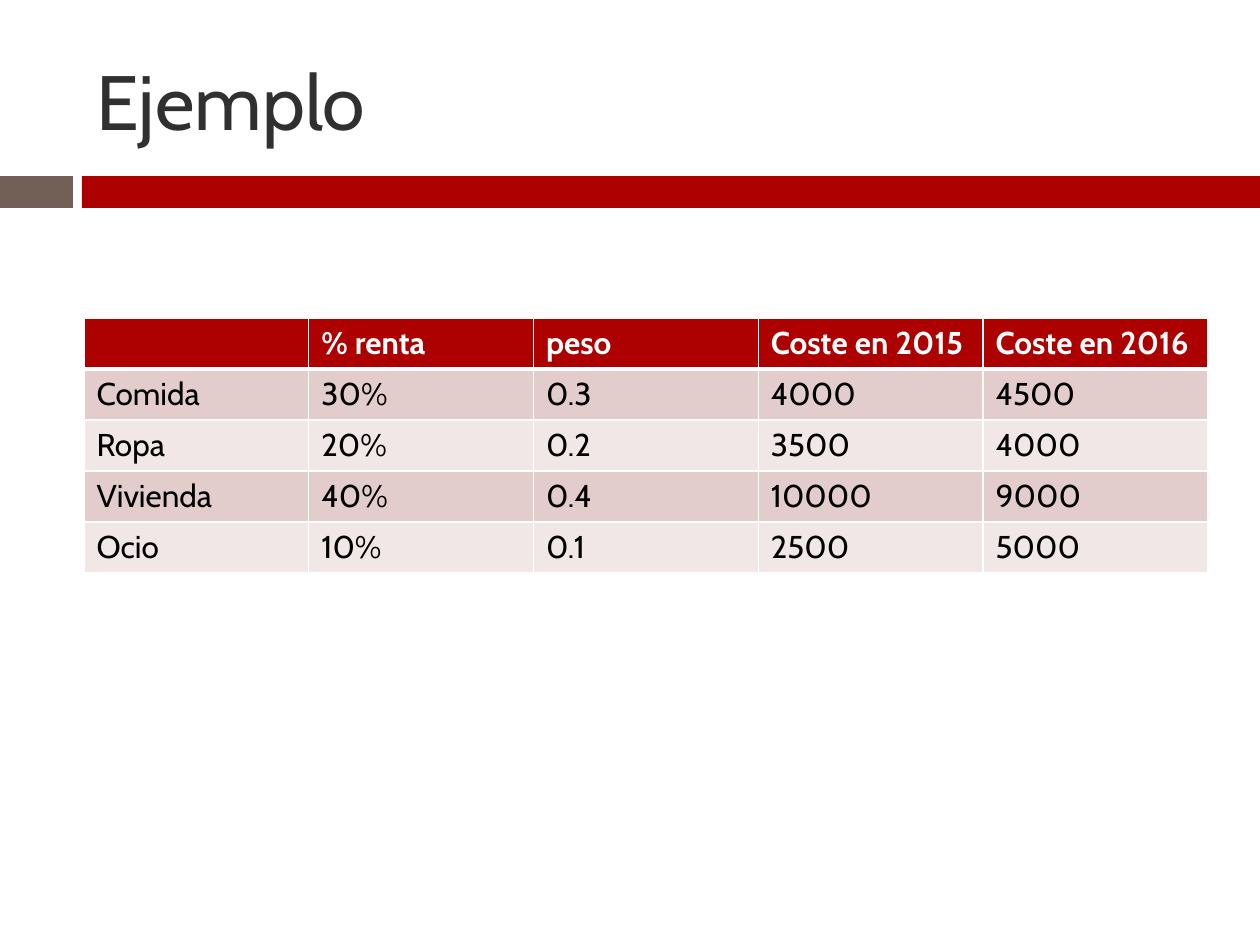
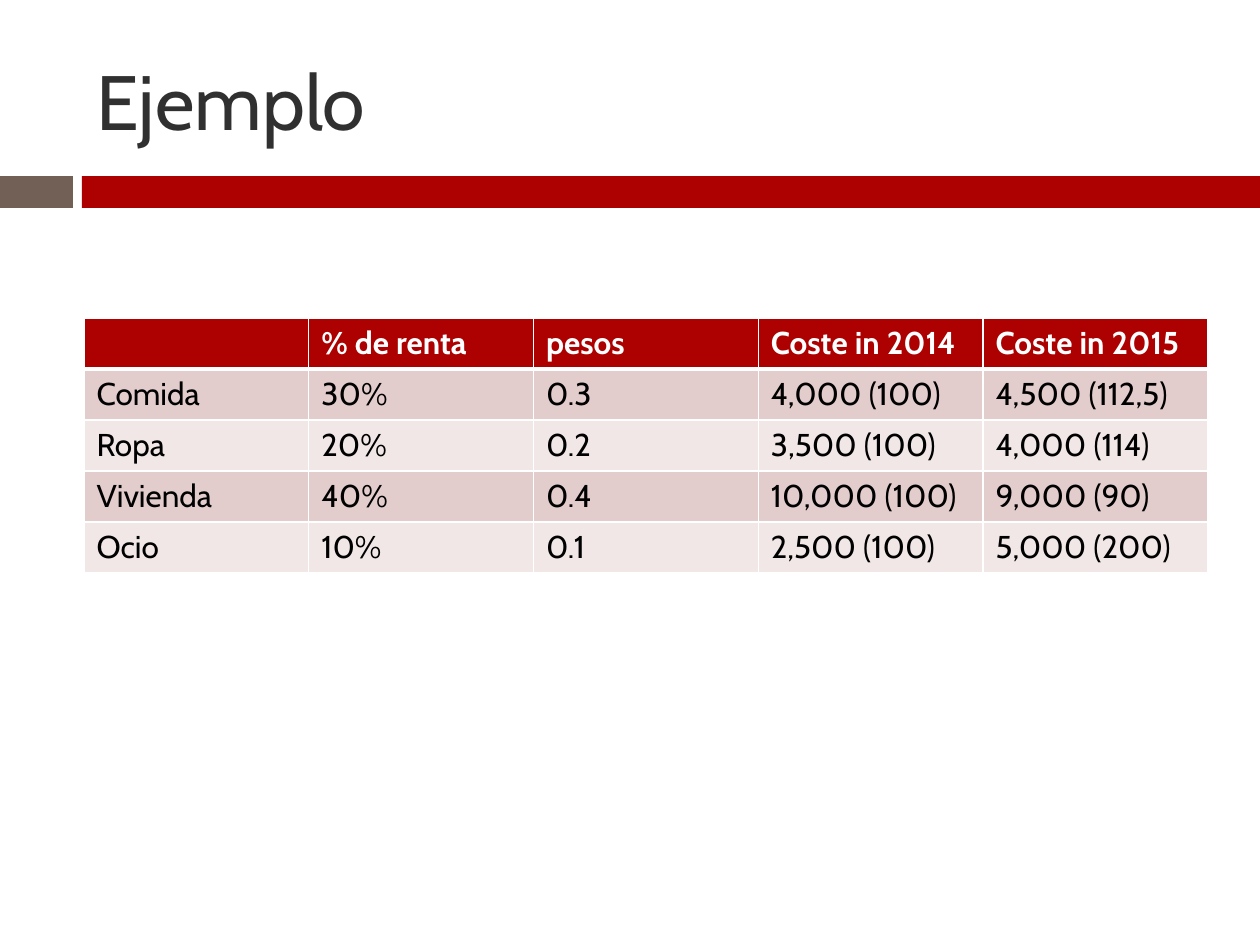
from dataclasses import dataclass

from lxml.etree import SubElement
from pptx import Presentation
from pptx.dml.color import RGBColor as RGB
from pptx.enum.shapes import MSO_SHAPE as Shape
from pptx.enum.text import MSO_ANCHOR as Anchor
from pptx.oxml.ns import qn
from pptx.util import Pt

# Content: title, header row and body rows of each slide
SLIDES = [
    ("Ejemplo", [
        ("", "% renta", "peso", "Coste en 2015", "Coste en 2016"),
        ("Comida", "30%", "0.3", "4000", "4500"),
        ("Ropa", "20%", "0.2", "3500", "4000"),
        ("Vivienda", "40%", "0.4", "10000", "9000"),
        ("Ocio", "10%", "0.1", "2500", "5000"),
    ]),
    ("Ejemplo", [
        ("", "% de renta", "pesos", "Coste in 2014", "Coste in 2015"),
        ("Comida", "30%", "0.3", "4,000 (100)", "4,500 (112,5)"),
        ("Ropa", "20%", "0.2", "3,500 (100)", "4,000 (114)"),
        ("Vivienda", "40%", "0.4", "10,000 (100)", "9,000 (90)"),
        ("Ocio", "10%", "0.1", "2,500 (100)", "5,000 (200)"),
    ]),
]


@dataclass(frozen=True)
class Theme:
    font: str = "Cabin"
    title: str = "303030"
    red: str = "AD0101"
    brown: str = "726056"
    rows: tuple = ("E3CCCC", "F1E7E7")
    white: str = "FFFFFF"
    black: str = "000000"
    head_size: int = 44
    cell_size: int = 18
    thin: int = 1
    thick: int = 3


THEME = Theme()

# Layout in px, 126 to the inch
WIDE, HIGH = 1260, 945
LEFT, SPAN = 84, 1124
TITLE_TOP, TITLE_HIGH = 32, 136
BAND_TOP, BAND_HIGH = 176, 32
BANDS = [(0, 73, THEME.brown), (82, WIDE - 82, THEME.red)]
GRID_TOP, ROW_HIGH = 318, 51


def px(n):
    return round(n * 914400 / 126)


def box(*sides):
    return [px(n) for n in sides]


def paint(item, color):
    item.fill.solid()
    item.fill.fore_color.rgb = RGB.from_string(color)


def style(frame, size, color, bold=False):
    for run in frame.paragraphs[0].runs:
        font = run.font
        font.name, font.size, font.bold = THEME.font, Pt(size), bold
        font.color.rgb = RGB.from_string(color)


def add_bands(slide):
    for left, width, color in BANDS:
        band = slide.shapes.add_shape(
            Shape.RECTANGLE, *box(left, BAND_TOP, width, BAND_HIGH))
        band.shadow.inherit = False
        band.line.fill.background()
        paint(band, color)


def add_title(slide, text):
    frame = slide.shapes.add_textbox(
        *box(LEFT, TITLE_TOP, SPAN, TITLE_HIGH)).text_frame
    frame.word_wrap = True
    frame.vertical_anchor = Anchor.MIDDLE
    frame.text = text
    style(frame, THEME.head_size, THEME.title)


def add_edges(cell, top, bottom):
    edges = {"L": THEME.thin, "R": THEME.thin, "T": top, "B": bottom}
    props = cell._tc.get_or_add_tcPr()
    for side, width in edges.items():
        line = SubElement(props, qn(f"a:ln{side}"), w=str(Pt(width)))
        fill = SubElement(line, qn("a:solidFill"))
        SubElement(fill, qn("a:srgbClr"), val=THEME.white)


def add_grid(slide, rows):
    count = len(rows[0])
    grid = slide.shapes.add_table(
        len(rows), count,
        *box(LEFT, GRID_TOP, SPAN, ROW_HIGH * len(rows))).table
    for col in grid.columns:
        col.width = px(SPAN / count)
    for r, row in enumerate(rows):
        head = r == 0
        grid.rows[r].height = px(ROW_HIGH)
        for c, text in enumerate(row):
            cell = grid.cell(r, c)
            # The thick rule lies between the header and the first row
            add_edges(cell, THEME.thick if r == 1 else THEME.thin,
                      THEME.thick if head else THEME.thin)
            paint(cell, THEME.red if head else THEME.rows[(r - 1) % 2])
            cell.text_frame.text = text
            style(cell.text_frame, THEME.cell_size,
                  THEME.white if head else THEME.black, head)


def main():
    deck = Presentation()
    deck.slide_width, deck.slide_height = box(WIDE, HIGH)
    for title, rows in SLIDES:
        slide = deck.slides.add_slide(deck.slide_layouts[6])
        add_bands(slide)
        add_title(slide, title)
        add_grid(slide, rows)
    deck.save("out.pptx")


if __name__ == "__main__":
    main()
